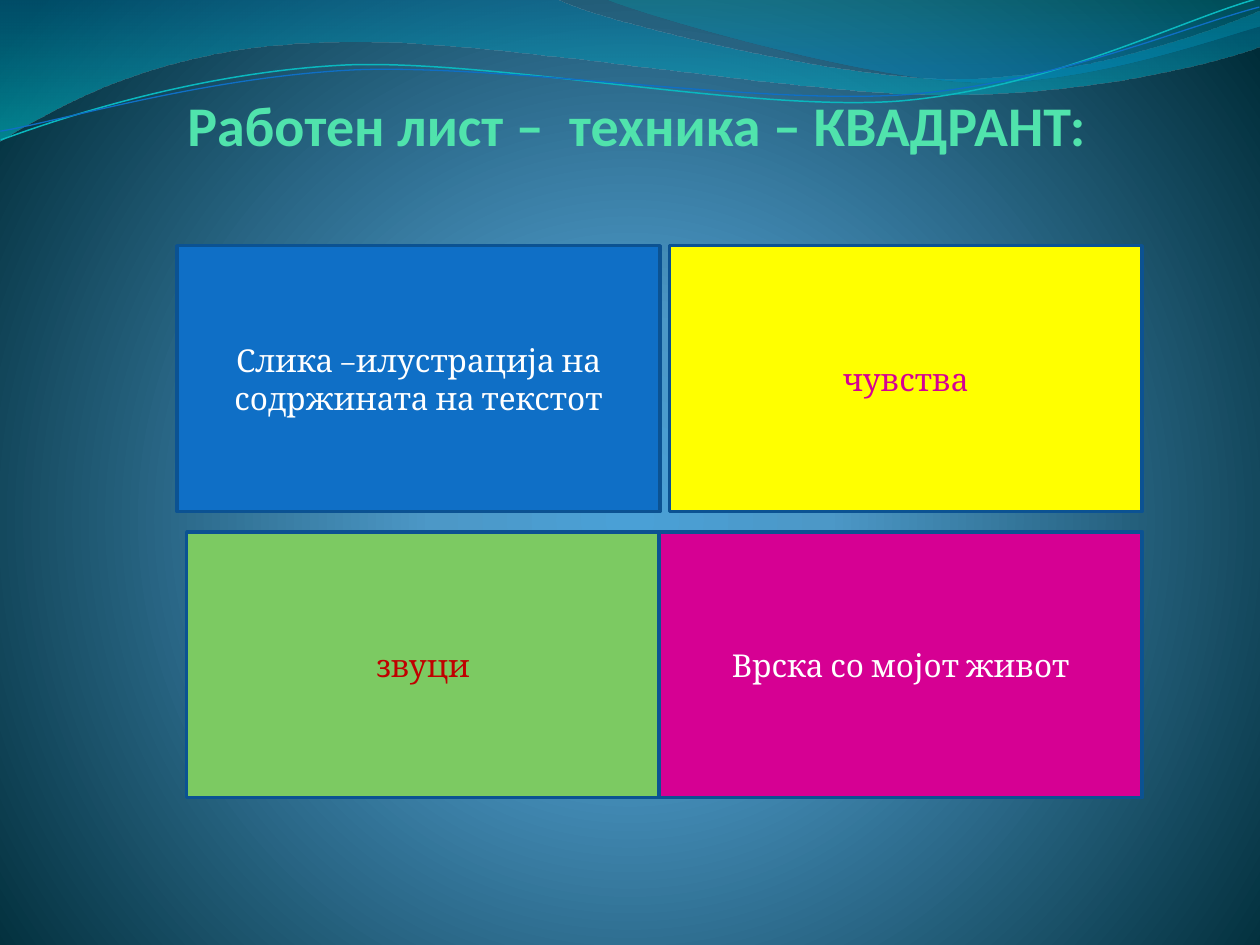
import pptx
import pptx.util
import pptx.dml.color
import pptx.enum.text
import pptx.enum.shapes
import pptx.oxml
import pptx.oxml.ns

Pt = pptx.util.Pt
Align = pptx.enum.text.PP_ALIGN
Anchor = pptx.enum.text.MSO_ANCHOR
qn = pptx.oxml.ns.qn
SPACE = pptx.oxml.ns.nsdecls("a")

HUES = {
    "mint": "50E3AC", "white": "FFFFFF", "blue": "0F6FC6", "navy": "0B5292",
    "yellow": "FFFF00", "pink": "D60093", "green": "7CCA62", "red": "C00000",
    "aqua": "0AB8BF", "sky": "4AA0D6", "steel": "4C98C7", "night": "002C38",
    "deep": "0074A1", "cyan": "00C6CF", "teal": "00A1A9", "sea": "008BBF",
}
DOWN = '<a:lin ang="5400000" scaled="1"/>'
GLOW = ('<a:path path="circle"><a:fillToRect l="10000" t="110000" '
        'r="10000" b="100000"/></a:path>')
TILT = -2.7

# Bands and lines: a start, then pairs (line) or sixes (Bezier curve)
BANDS = [
    ([(0, 0), (317, -1), (343, 12, 478, 45, 546, 45),
      (614, 45, 690, 19, 720, 6), (721, 26), (708, 32, 626, 55, 537, 54),
      (448, 54, 275, 20, 185, 24), (93, 26, 33, 60, -1, 81)],
     [(0, "deep", 45), (100, "cyan", 55)]),
    ([(345, -1), (366, 8, 491, 45, 554, 47),
      (616, 50, 692, 23, 720, 15), (720, 0)],
     [(0, "teal", 30), (80, "sea", 45)]),
]
LINES = [
    ([(-1, 63), (34, 52, 114, 29.5, 199, 29.5),
      (284, 30.5, 426, 67, 512, 65), (599, 62, 676, 26, 721, 16)],
     "aqua", 0.85),
    ([(-1, 58), (33, 54, 118, 32.5, 204, 32.5),
      (290, 33.5, 429, 63, 515, 61.5), (601, 59.5, 678, 30, 721, 21)],
     "blue", 0.75),
]
# Quadrants: left offset, row, width, text, fill, ink
QUADS = [
    (0, 0, 276, "Слика –илустрација на содржината на текстот", "blue", "white"),
    (281.3, 0, 270, "чувства", "yellow", "pink"),
    (5.5, 1, 270, "звуци", "green", "red"),
    (275.5, 1, 276, "Врска со мојот живот", "pink", "white"),
]


def rgb(name):
    return pptx.dml.color.RGBColor.from_string(HUES[name])


def apply(item, form):
    for key, val in form.items():
        setattr(item, key, val)


def grade(fill, host, stops, way):
    """Put a gradient with given stops in place of the host's solid fill."""
    fill.solid()
    marks = "".join(
        f'<a:gs pos="{pos * 1000}"><a:srgbClr val="{HUES[hue]}">'
        f'<a:alpha val="{alpha * 1000}"/></a:srgbClr></a:gs>'
        for pos, hue, alpha in stops)
    grad = pptx.oxml.parse_xml(
        f'<a:gradFill {SPACE} rotWithShape="1">'
        f'<a:gsLst>{marks}</a:gsLst>{way}</a:gradFill>')
    old = next(host.iter(qn("a:solidFill")))
    old.getparent().replace(old, grad)


def curve(slide, box, steps, close):
    """Build the outline from its end points, then bend the curved parts."""
    left, top = box[:2]
    ends = [(Pt(left + s[-2]), Pt(top + s[-1])) for s in steps]
    build = slide.shapes.build_freeform(*ends[0])
    build.add_line_segments(ends[1:], close=close)
    shape = build.convert_to_shape()
    shape.shadow.inherit = False
    parts = list(shape._element.iter(qn("a:lnTo")))
    for part, step in zip(parts, steps[1:]):
        if len(step) == 6:
            dots = "".join(
                f'<a:pt x="{Pt(left + x) - shape.left}" '
                f'y="{Pt(top + y) - shape.top}"/>'
                for x, y in zip(step[::2], step[1::2]))
            bend = pptx.oxml.parse_xml(
                f'<a:cubicBezTo {SPACE}>{dots}</a:cubicBezTo>')
            part.getparent().replace(part, bend)
    return shape


def waves(slide, box):
    for steps, stops in BANDS:
        band = curve(slide, box, steps, True)
        band.line.fill.background()
        grade(band.fill, band._element.spPr, stops, DOWN)
    for steps, hue, width in LINES:
        line = curve(slide, box, steps, False)
        line.rotation = TILT
        line.fill.background()
        line.line.color.rgb = rgb(hue)
        line.line.width = Pt(width)


def place(shape, box):
    apply(shape, dict(zip(("left", "top", "width", "height"), map(Pt, box))))


def write(shape, text, frame, para, font, ink):
    body = shape.text_frame
    body.text = text
    apply(body, frame)
    apply(body.paragraphs[0], para)
    face = body.paragraphs[0].runs[0].font
    apply(face, font)
    face.color.rgb = rgb(ink)


def heading(slide, box):
    title = slide.shapes.title
    place(title, box)
    frame = {"margin_left": Pt(65), "margin_top": 0, "margin_right": 0,
             "margin_bottom": 0, "vertical_anchor": Anchor.BOTTOM,
             "word_wrap": True, "auto_size": pptx.enum.text.MSO_AUTO_SIZE.NONE}
    write(title, "Работен лист –  техника – КВАДРАНТ:", frame,
          {"alignment": Align.LEFT},
          {"name": "Calibri", "size": Pt(32), "bold": True}, "mint")
    # Bring the title in front of the waves
    title._element.getparent().append(title._element)


def quadrant(slide, box):
    left, top, _, full = box
    high = 152
    pitch = full - high
    for dx, row, wide, text, hue, ink in QUADS:
        rect = slide.shapes.add_shape(
            pptx.enum.shapes.MSO_SHAPE.RECTANGLE, 0, 0, 0, 0)
        place(rect, (left + dx, top + row * pitch, wide, high))
        rect.shadow.inherit = False
        rect.fill.solid()
        rect.fill.fore_color.rgb = rgb(hue)
        rect.line.color.rgb = rgb("navy")
        rect.line.width = Pt(2)
        write(rect, text,
              {"vertical_anchor": Anchor.MIDDLE, "word_wrap": True},
              {"alignment": Align.CENTER},
              {"name": "Cambria", "size": Pt(18)}, ink)


def main():
    deck = pptx.Presentation()
    apply(deck, {"slide_width": Pt(720), "slide_height": Pt(540)})
    slide = deck.slides.add_slide(deck.slide_layouts[5])
    # Background glow
    grade(slide.background.fill, slide._element,
          [(0, "sky", 100), (25, "steel", 100), (100, "night", 100)], GLOW)
    waves(slide, (0, 0, 720, 81))
    heading(slide, (42, 34, 612, 56))
    quadrant(slide, (101.2, 140.4, 551.5, 315.5))
    deck.save("out.pptx")


if __name__ == "__main__":
    main()
